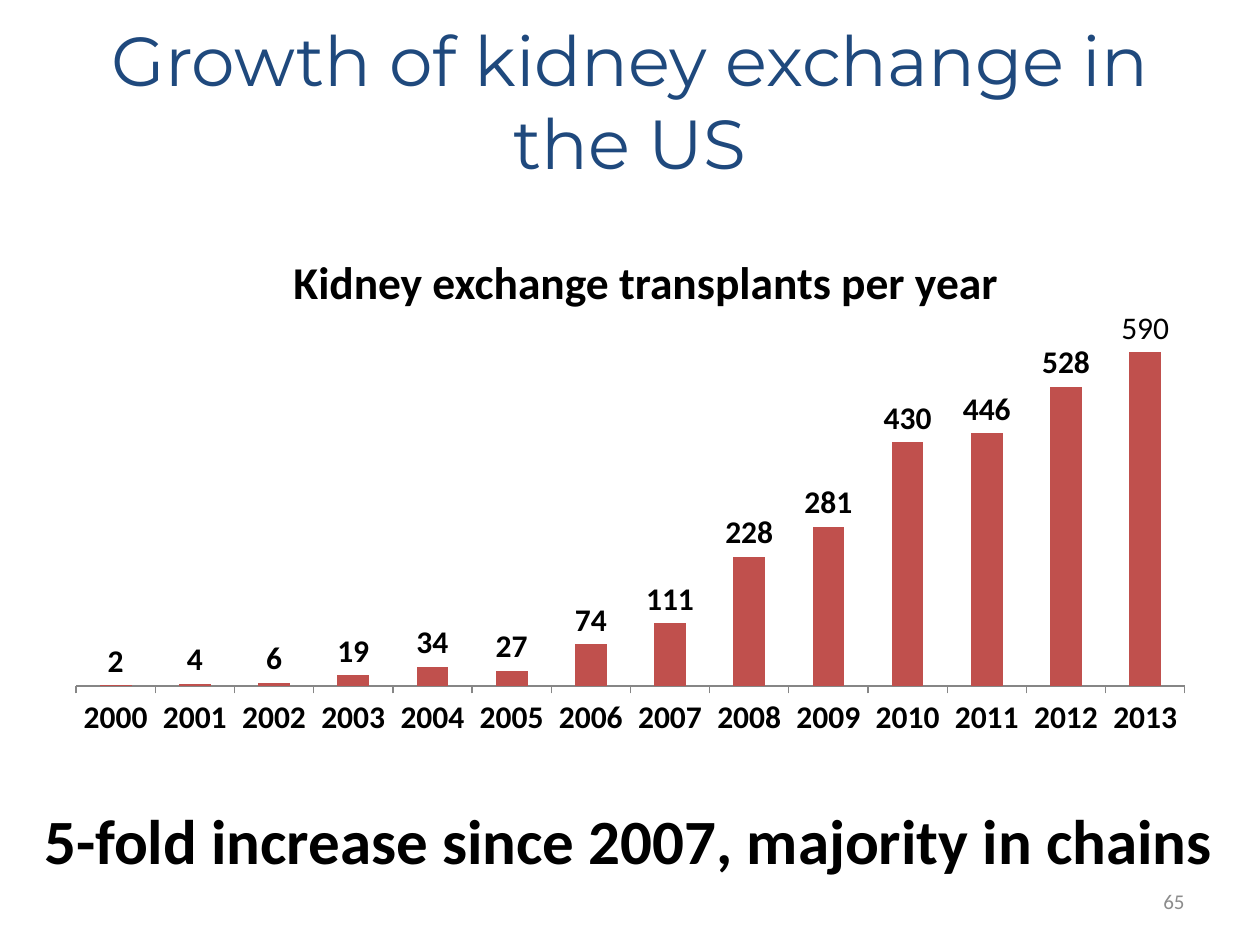
from lxml.etree import SubElement
from pptx import Presentation
from pptx.chart.data import CategoryChartData
from pptx.dml.color import RGBColor
from pptx.enum.chart import XL_CHART_TYPE, XL_LABEL_POSITION, XL_TICK_MARK
from pptx.enum.text import MSO_ANCHOR, MSO_AUTO_SIZE, PP_ALIGN
from pptx.oxml.ns import qn
from pptx.util import Emu, Pt

SCALE = 914400 / 126


def color(value):
    return RGBColor.from_string(value)


def write(box, text, place, size, font="Calibri", fill="000000", bold=False,
          align=PP_ALIGN.LEFT, anchor=MSO_ANCHOR.MIDDLE, wrap=True):
    box.left, box.top, box.width, box.height = [Emu(round(n * SCALE)) for n in place]
    frame = box.text_frame
    frame.word_wrap = wrap
    frame.auto_size = MSO_AUTO_SIZE.NONE
    frame.vertical_anchor = anchor
    para = frame.paragraphs[0]
    para.alignment = align
    span = para.add_run()
    span.text = text
    span.font.name = font
    span.font.size = Pt(size)
    span.font.bold = bold
    span.font.color.rgb = color(fill)


deck = Presentation()
deck.slide_width = Emu(round(1260 * SCALE))
deck.slide_height = Emu(round(945 * SCALE))
page = deck.slides.add_slide(deck.slide_layouts[5])
shapes = page.shapes

write(shapes.title, "Growth of kidney exchange in the US", (63, 21, 1134, 158), 39.6,
      font="Montserrat", fill="1F497D", align=PP_ALIGN.CENTER)
write(shapes.add_textbox(0, 0, 0, 0), "Kidney exchange transplants per year",
      (281, 247, 738, 68), 26, bold=True, align=PP_ALIGN.JUSTIFY, wrap=False)

data = CategoryChartData()
data.categories = [str(year) for year in range(2000, 2014)]
data.add_series("Series 1", (2, 4, 6, 19, 34, 27, 74, 111, 228, 281, 430, 446, 528, 589))
chart_place = [Emu(round(n * SCALE)) for n in (53, 280, 1155, 467)]
chart = shapes.add_chart(XL_CHART_TYPE.COLUMN_CLUSTERED, *chart_place, data).chart
chart.has_legend = False
chart.has_title = False
chart.font.name = "Calibri"
chart.font.size = Pt(10)
chart.font.color.rgb = color("000000")

value_axis = chart.value_axis
value_axis.visible = False
value_axis.has_major_gridlines = False
value_axis.minimum_scale = 0
value_axis.maximum_scale = 700
year_axis = chart.category_axis
year_axis.major_tick_mark = XL_TICK_MARK.OUTSIDE
year_axis.format.line.color.rgb = color("868686")
year_axis.tick_labels.font.size = Pt(18)
year_axis.tick_labels.font.bold = True

plot = chart.plots[0]
plot.gap_width = 150
plot.vary_by_categories = False
series = plot.series[0]
series.format.fill.solid()
series.format.fill.fore_color.rgb = color("C0504D")
labels = series.data_labels
labels.show_value = True
labels.position = XL_LABEL_POSITION.OUTSIDE_END
labels.font.size = Pt(18)
labels.font.bold = True
last_label = series.points[13].data_label
last_label.position = XL_LABEL_POSITION.OUTSIDE_END
span = last_label.text_frame.paragraphs[0].add_run()
span.text = "590"
span.font.size = Pt(18)
span.font.bold = False

plot_area = plot_area = chart.plots[0]._element.getparent()
layout = plot_area.find(qn("c:layout"))
if layout is None:
    layout = SubElement(plot_area, qn("c:layout"))
    plot_area.insert(0, layout)
manual = SubElement(layout, qn("c:manualLayout"))
for tag, value in (("layoutTarget", "inner"), ("xMode", "edge"), ("yMode", "edge"),
                   ("x", "0.02"), ("y", "0.02"), ("w", "0.96"), ("h", "0.85")):
    SubElement(manual, qn("c:" + tag)).set("val", value)

write(shapes.add_textbox(0, 0, 0, 0), "5-fold increase since 2007, majority in chains",
      (32, 795, 1207, 89), 36, bold=True, anchor=MSO_ANCHOR.TOP)
write(shapes.add_textbox(0, 0, 0, 0), "65", (903, 876, 294, 50), 12,
      fill="8C8C8C", align=PP_ALIGN.RIGHT)

deck.save("out.pptx")
